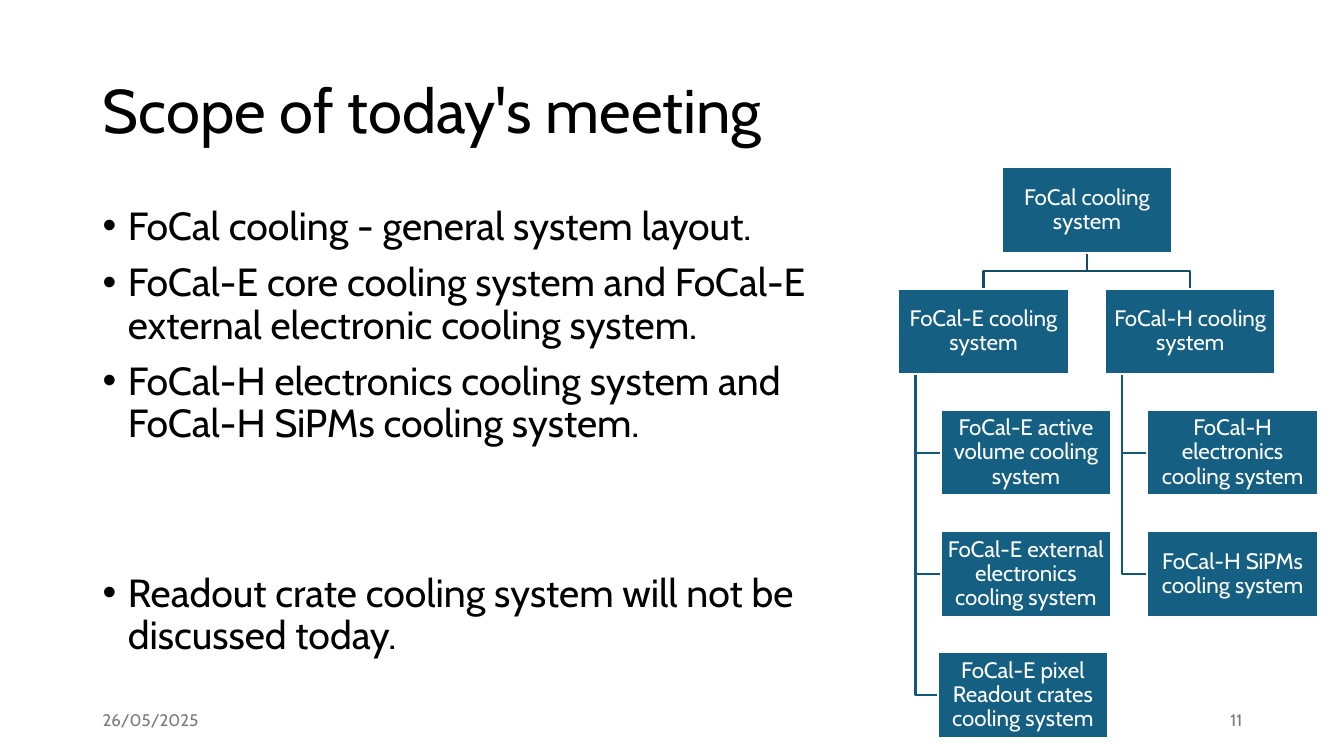
from pptx import Presentation
from pptx.dml.color import RGBColor
from pptx.enum.shapes import MSO_SHAPE
from pptx.enum.text import MSO_ANCHOR, PP_ALIGN
from pptx.util import Inches, Pt
from lxml import etree

RECT = MSO_SHAPE.RECTANGLE
TOP, MIDDLE = MSO_ANCHOR.TOP, MSO_ANCHOR.MIDDLE
LEFT, CENTER, RIGHT = PP_ALIGN.LEFT, PP_ALIGN.CENTER, PP_ALIGN.RIGHT
FONT = "Cabin"
COLORS = {"text": "000000", "footer": "797979", "box": "156082",
          "white": "FFFFFF", "fork": "114D68", "branch": "135776"}

MARGIN = 0.92
BOX_W, BOX_H = 1.69, 0.85
TREE_X, TREE_Y = 8.91, 1.66
COL_STEP, ROW_STEP = 2.05, 1.203
STEM, INDENT = 0.17, 0.42

BULLETS = [
    ("FoCal cooling - general system layout.", 10),
    ("FoCal-E core cooling system and FoCal-E external electronic cooling system.", 10),
    ("FoCal-H electronics cooling system and FoCal-H SiPMs cooling system.", 10),
    ("Readout crate cooling system will not be discussed today.", 91),
]
BRANCHES = [
    ("FoCal-E cooling system", [
        ("FoCal-E active volume cooling system", INDENT),
        ("FoCal-E external electronics cooling system", INDENT),
        ("FoCal-E pixel Readout crates cooling system", 0.39)]),
    ("FoCal-H cooling system", [
        ("FoCal-H electronics cooling system", INDENT),
        ("FoCal-H SiPMs cooling system", INDENT)]),
]


def rgb(name):
    """Return the named colour."""
    return RGBColor.from_string(COLORS[name])


def style(p, size, color, align=LEFT, spacing=0.9):
    """Set the font and layout of a paragraph."""
    p.font.name, p.font.size = FONT, Pt(size)
    p.font.color.rgb = rgb(color)
    p.alignment, p.line_spacing = align, spacing


def add_text(s, x, y, w, h, anchor=MIDDLE):
    """Add an empty wrapping text box and return its text frame."""
    tf = s.shapes.add_textbox(Inches(x), Inches(y), Inches(w), Inches(h)).text_frame
    tf.word_wrap, tf.vertical_anchor = True, anchor
    return tf


def add_line_of_text(s, x, y, w, h, text, size, color, align=LEFT):
    """Add a text box that holds one paragraph."""
    p = add_text(s, x, y, w, h).paragraphs[0]
    p.text = text
    style(p, size, color, align)


def add_bullets(s, x, y, w, h):
    """Add the bulleted list."""
    tf = add_text(s, x, y, w, h, TOP)
    for i, (text, before) in enumerate(BULLETS):
        p = tf.add_paragraph() if i else tf.paragraphs[0]
        p.text = text
        style(p, 28, "text")
        p.space_before = Pt(before)
        pPr = p._p.get_or_add_pPr()
        pPr.set("marL", str(Inches(0.25)))
        pPr.set("indent", str(-Inches(0.25)))
        ns = pPr.nsmap["a"]
        font = etree.Element(f"{{{ns}}}buFont", typeface="Arial")
        char = etree.Element(f"{{{ns}}}buChar", char="•")
        pPr.find(f"{{{ns}}}spcBef").addnext(font)
        font.addnext(char)


def add_elbow(s, points, color):
    """Add an open line through the points."""
    start, *rest = [(Inches(x), Inches(y)) for x, y in points]
    builder = s.shapes.build_freeform(*start)
    builder.add_line_segments(rest, close=False)
    sp = builder.convert_to_shape()
    sp.shadow.inherit = False
    sp.fill.background()
    sp.line.color.rgb, sp.line.width = rgb(color), Pt(1.5)


def add_box(s, x, y, text):
    """Add one box of the tree."""
    sp = s.shapes.add_shape(RECT, Inches(x), Inches(y), Inches(BOX_W), Inches(BOX_H))
    sp.shadow.inherit = False
    sp.fill.solid()
    sp.fill.fore_color.rgb = rgb("box")
    sp.line.color.rgb, sp.line.width = rgb("white"), Pt(1.5)
    tf = sp.text_frame
    tf.word_wrap, tf.vertical_anchor = True, MIDDLE
    tf.margin_left = tf.margin_right = tf.margin_top = tf.margin_bottom = Inches(0.01)
    p = tf.paragraphs[0]
    p.text = text
    style(p, 16, "white", CENTER)


def row_y(row):
    """Return the top of a tree row."""
    return TREE_Y + row * ROW_STEP


def add_branch(s, x, title, children):
    """Add a branch head with its children below."""
    stem = x + STEM
    for row, (text, indent) in enumerate(children, 2):
        mid = row_y(row) + BOX_H / 2
        add_elbow(s, [(stem, row_y(1) + BOX_H), (stem, mid), (x + indent, mid)], "branch")
        add_box(s, x + indent, row_y(row), text)
    add_box(s, x, row_y(1), title)


def add_tree(s):
    """Add the cooling system hierarchy."""
    root_x = TREE_X + COL_STEP / 2
    root_mid, root_end = root_x + BOX_W / 2, TREE_Y + BOX_H
    fork_y = (root_end + row_y(1)) / 2
    for col, (title, children) in enumerate(BRANCHES):
        x = TREE_X + col * COL_STEP
        mid = x + BOX_W / 2
        add_elbow(s, [(root_mid, root_end), (root_mid, fork_y),
                      (mid, fork_y), (mid, row_y(1))], "fork")
        add_branch(s, x, title, children)
    add_box(s, root_x, TREE_Y, "FoCal cooling system")


def main():
    """Build the slide and save it."""
    prs = Presentation()
    prs.slide_width, prs.slide_height = Inches(13.33), Inches(7.5)
    s = prs.slides.add_slide(prs.slide_layouts[6])
    add_line_of_text(s, MARGIN, 0.4, 11.5, 1.45, "Scope of today's meeting", 44, "text")
    add_bullets(s, MARGIN, 2, 7.36, 4.76)
    add_line_of_text(s, MARGIN, 6.95, 3, 0.4, "26/05/2025", 12, "footer")
    add_line_of_text(s, 9.42, 6.95, 3, 0.4, "11", 12, "footer", RIGHT)
    add_tree(s)
    prs.save("out.pptx")


if __name__ == "__main__":
    main()
